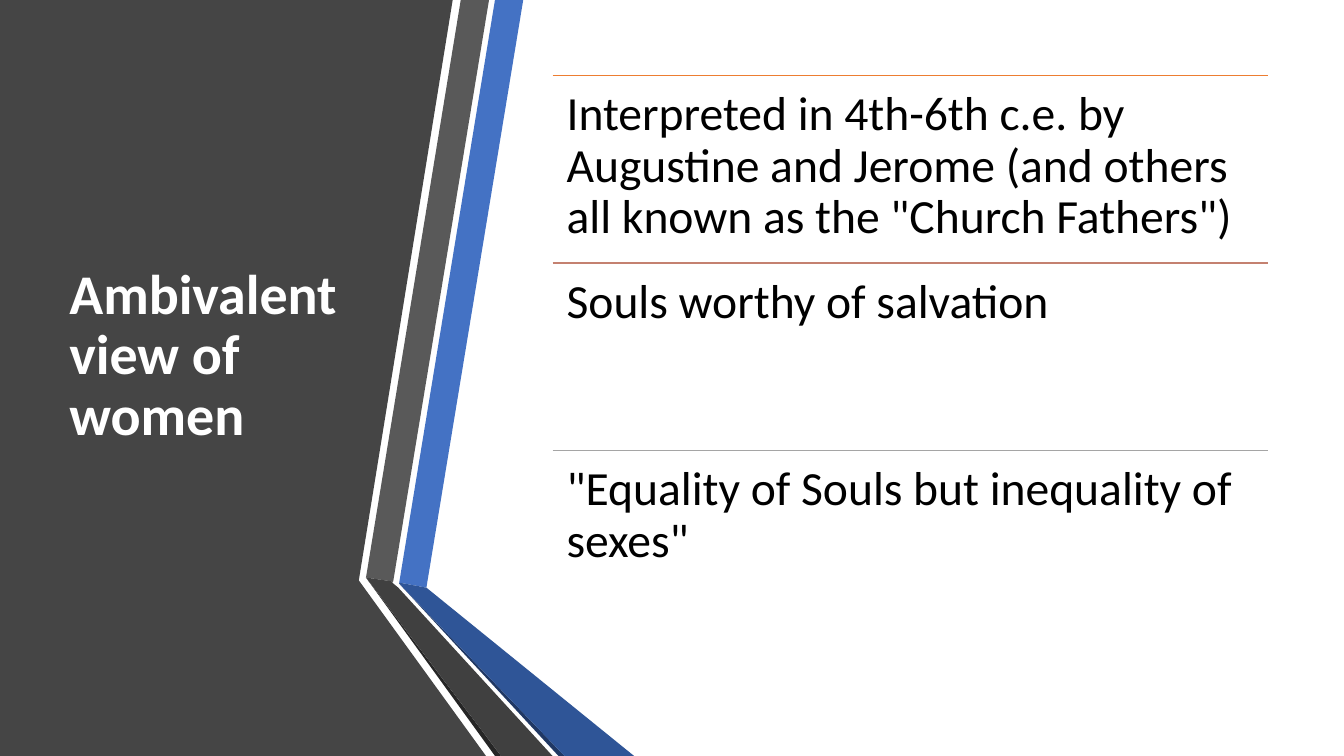
from lxml import etree
from pptx import Presentation
from pptx.dml.color import RGBColor
from pptx.enum import shapes, text
from pptx.oxml.ns import qn
from pptx.util import Inches, Pt

TITLE = "Ambivalent view of women"
POINTS = [
    ("ED7D31", 'Interpreted in 4th-6th c.e. by Augustine and Jerome (and others all known as the "Church Fathers")'),
    ("C48170", "Souls worthy of salvation"),
    ("A5A5A5", '"Equality of Souls but inequality of sexes"'),
]
# Fill colour and corner points in inches, from back to front
PANEL = ("454545", [(0, 0), (4.49, 0), (3.56, 5.75), (3.56, 5.76), (4.82, 7.5), (0, 7.5)])
RIBBONS = [
    ("4472C4", [(3.96, 5.78), (4.23, 5.83), (5.19, 0), (4.91, 0)]),
    ("595959", [(4.85, 0), (4.57, 0), (3.63, 5.73), (3.9, 5.77)]),
    ("262626", [(3.63, 5.73), (4.91, 7.5), (4.97, 7.5)]),
    ("203864", [(3.96, 5.79), (5.54, 7.5), (5.6, 7.5)]),
    ("2F5597", [(3.96, 5.79), (5.6, 7.5), (6.29, 7.5), (4.23, 5.83), (3.96, 5.78)]),
    ("404040", [(5.48, 7.5), (3.95, 5.83), (3.89, 5.78), (3.9, 5.77), (3.63, 5.73), (4.97, 7.5)]),
]
TITLE_BOX = (0.59, 0.75, 3.04, 5.58)
LIST_LEFT, LIST_TOP, LIST_WIDTH, ROW_HEIGHT = 5.48, 0.75, 7.1, 1.86
TITLE_FONT = {"name": "Calibri", "size": Pt(40), "bold": True}
POINT_FONT = {"name": "Calibri", "size": Pt(34), "bold": False}


def color(hex_value):
    return RGBColor.from_string(hex_value)


def add_polygon(parent, fill, points):
    corners = [(Inches(x), Inches(y)) for x, y in points]
    builder = parent.build_freeform(*corners[0])
    builder.add_line_segments(corners[1:], close=True)
    shape = builder.convert_to_shape()
    shape.shadow.inherit = False
    shape.fill.solid()
    shape.fill.fore_color.rgb = color(fill)
    shape.line.fill.background()


def add_text(parent, box, content, font_color, font, space_after, anchor, insets):
    shape = parent.add_textbox(*map(Inches, box))
    frame = shape.text_frame
    left_right, top_bottom = map(Inches, insets)
    frame_format = {
        "word_wrap": True, "vertical_anchor": anchor,
        "margin_left": left_right, "margin_right": left_right,
        "margin_top": top_bottom, "margin_bottom": top_bottom,
    }
    for name, value in frame_format.items():
        setattr(frame, name, value)
    paragraph = frame.paragraphs[0]
    paragraph.line_spacing = 0.9
    paragraph.space_after = Pt(space_after)
    run = paragraph.add_run()
    run.text = content
    for name, value in font.items():
        setattr(run.font, name, value)
    run.font.color.rgb = color(font_color)


def add_rule(parent, top, line_color):
    start, end, height = Inches(LIST_LEFT), Inches(LIST_LEFT + LIST_WIDTH), Inches(top)
    rule = parent.add_connector(shapes.MSO_CONNECTOR.STRAIGHT, start, height, end, height)
    rule.line.color.rgb = color(line_color)
    rule.line.width = Pt(1)
    etree.SubElement(rule._element.spPr, qn("a:effectLst"))


def main():
    presentation = Presentation()
    presentation.slide_width, presentation.slide_height = Inches(13.33), Inches(7.5)
    slide = presentation.slides.add_slide(presentation.slide_layouts[6])

    add_polygon(slide.shapes, *PANEL)
    ribbons = slide.shapes.add_group_shape().shapes
    for fill, points in RIBBONS:
        add_polygon(ribbons, fill, points)

    add_text(slide.shapes, TITLE_BOX, TITLE, "FFFFFF", TITLE_FONT, 6,
             text.MSO_ANCHOR.MIDDLE, (0.1, 0.05))
    rows = slide.shapes.add_group_shape().shapes
    for index, (line_color, content) in enumerate(POINTS):
        top = LIST_TOP + index * ROW_HEIGHT
        add_rule(rows, top, line_color)
        add_text(rows, (LIST_LEFT, top, LIST_WIDTH, ROW_HEIGHT), content, "000000",
                 POINT_FONT, 12, text.MSO_ANCHOR.TOP, (0.14, 0.14))

    presentation.save("out.pptx")


if __name__ == "__main__":
    main()
